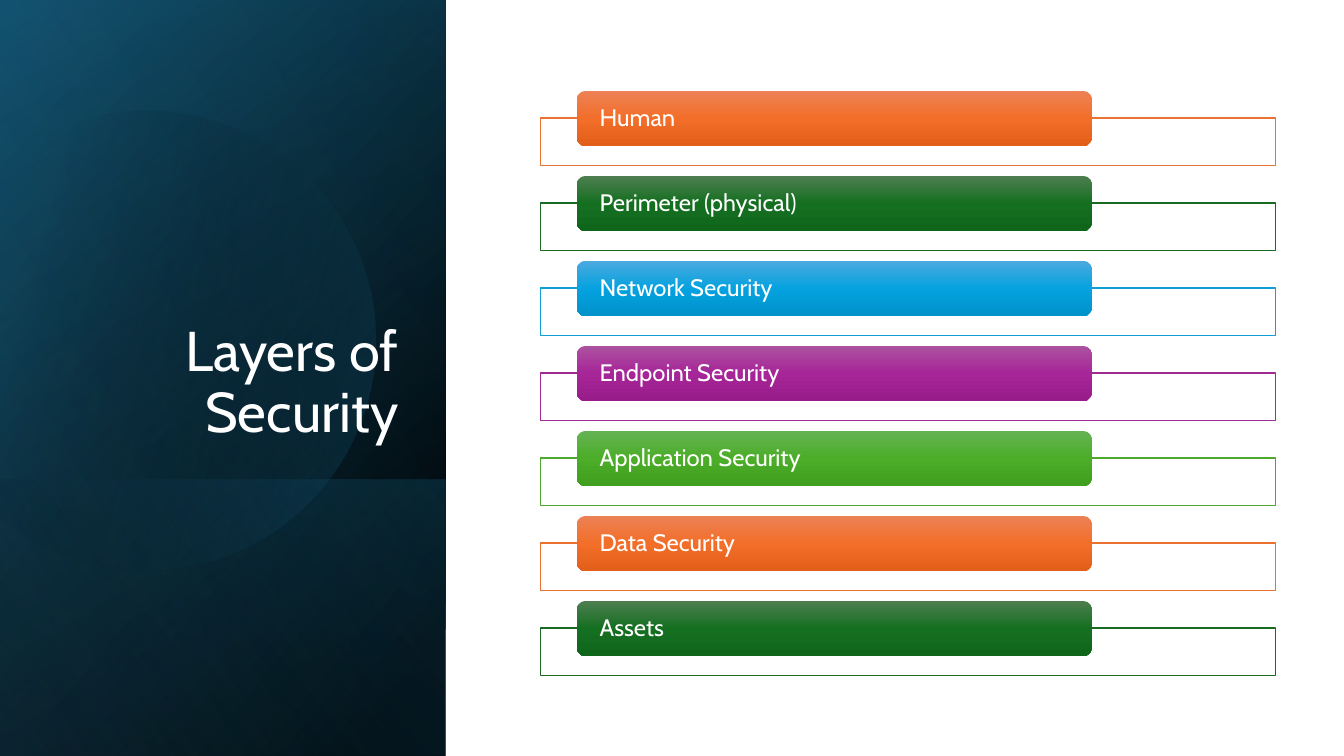
from math import cos, radians, sin, tan

from pptx import Presentation
from pptx.dml.color import RGBColor
from pptx.enum.shapes import MSO_SHAPE
from pptx.enum.text import MSO_ANCHOR, MSO_AUTO_SIZE, PP_ALIGN
from pptx.oxml.ns import qn
from pptx.util import Inches, Pt
from lxml.etree import SubElement

WIDTH, HEIGHT = 13.33, 7.5
PANEL_WIDTH = 4.42


def set_gradient(shape, stops, angle):
    """Stops are (position %, colour, opacity %)."""
    shape.shadow.inherit = False
    shape.line.fill.background()
    shape.fill.gradient()
    gradient = shape.element.spPr.find(qn("a:gradFill"))
    stop_list = gradient.find(qn("a:gsLst"))
    for old_stop in list(stop_list):
        stop_list.remove(old_stop)
    for position, color, opacity in stops:
        stop = SubElement(stop_list, qn("a:gs"), pos=str(position * 1000))
        fill = SubElement(stop, qn("a:srgbClr"), val=color)
        if opacity < 100:
            SubElement(fill, qn("a:alpha"), val=str(opacity * 1000))
    gradient.find(qn("a:lin")).set("ang", str(angle * 60000))


def format_text(shape, text, size, frame_format, paragraph_format):
    frame = shape.text_frame
    frame.text = text
    for name, value in frame_format.items():
        setattr(frame, name, value)
    paragraph = frame.paragraphs[0]
    for name, value in paragraph_format.items():
        setattr(paragraph, name, value)
    font = paragraph.runs[0].font
    font.name, font.size = "Cabin", Pt(size)
    font.color.rgb = RGBColor.from_string("FFFFFF")


presentation = Presentation()
presentation.slide_width, presentation.slide_height = Inches(WIDTH), Inches(HEIGHT)
slide = presentation.slides.add_slide(presentation.slide_layouts[5])
shapes = slide.shapes

# Left panel: gradient layers turned by 90 degrees
panels = [
    (HEIGHT, [(8, "000000", 100), (100, "104862", 100)], 50),
    (HEIGHT, [(0, "000000", 0), (99, "156082", 46)], 30),
    (2.74, [(2, "156082", 29), (100, "000000", 30)], 130),
    (HEIGHT, [(0, "000000", 0), (99, "46B1E1", 11)], 120),
]
for length, stops, angle in panels:
    left = (PANEL_WIDTH - length) / 2
    top = HEIGHT - (length + PANEL_WIDTH) / 2
    panel = shapes.add_shape(MSO_SHAPE.RECTANGLE, Inches(left), Inches(top),
                             Inches(length), Inches(PANEL_WIDTH))
    panel.rotation = 90
    panel.element.spPr.find(qn("a:xfrm")).set("flipH", "1")
    set_gradient(panel, stops, angle)

# Disc cut by a chord: start, then two handles and an end for each arc
center_x, center_y, radius = 1.44, 3.34, 2.28
arc_ends = [-118.1, -90, 0, 90, 150.3]
points = []
for start, end in zip(arc_ends, arc_ends[1:]):
    a, b = radians(start), radians(end)
    handle = 4 / 3 * tan((b - a) / 4)
    arc = [(cos(a), sin(a)),
           (cos(a) - handle * sin(a), sin(a) + handle * cos(a)),
           (cos(b) + handle * sin(b), sin(b) - handle * cos(b)),
           (cos(b), sin(b))]
    points += arc[1:] if points else arc
outline_points = [(center_x + radius * x, center_y + radius * y) for x, y in points]
builder = shapes.build_freeform(*outline_points[0], scale=Inches(1))
builder = shapes.build_freeform(*[value * 1000 for value in outline_points[0]],
                                scale=Inches(1) / 1000)
builder.add_line_segments([(x * 1000, y * 1000) for x, y in outline_points[1:]], close=True)
disc = builder.convert_to_shape()
segments = list(disc.element.iter(qn("a:lnTo")))
for first in range(0, len(segments), 3):
    curve = segments[first].makeelement(qn("a:cubicBezTo"))
    segments[first].addprevious(curve)
    for segment in segments[first:first + 3]:
        curve.append(segment[0])
        segment.getparent().remove(segment)
disc.rotation = 343.9
set_gradient(disc, [(29, "000000", 0), (100, "156082", 43)], 30)
panel.element.addprevious(disc.element)

# Title, brought in front of the panel
title = shapes.title
title.left, title.top, title.width, title.height = map(Inches, (0.64, 1.84, 3.41, 2.62))
format_text(title, "Layers of Security", 40,
            {"vertical_anchor": MSO_ANCHOR.BOTTOM, "word_wrap": True,
             "auto_size": MSO_AUTO_SIZE.NONE},
            {"alignment": PP_ALIGN.RIGHT, "line_spacing": 0.9})
disc.element.getparent().append(title.element)

# Security layers: an outlined frame with a labelled bar on its upper edge
palette = [
    ("E97132", "ED8257", "F26E29", "E25F1A"),
    ("196B24", "4D7E50", "156F21", "0F661B"),
    ("0F9ED5", "4CAADF", "05A2DF", "0092CB"),
    ("A02B93", "AC53A0", "A62598", "991C8B"),
    ("4EA72E", "66B354", "4BAD28", "409F1E"),
]
layers = ["Human", "Perimeter (physical)", "Network Security", "Endpoint Security",
          "Application Security", "Data Security", "Assets"]
FIRST_TOP, LAST_TOP = 0.9, 5.96
pitch = (LAST_TOP - FIRST_TOP) / (len(layers) - 1)
for row, layer in enumerate(layers):
    outline, *bar_colors = palette[row % len(palette)]
    top = FIRST_TOP + row * pitch

    frame = shapes.add_shape(MSO_SHAPE.RECTANGLE, Inches(5.36), Inches(top + 0.27),
                             Inches(7.29), Inches(0.47))
    frame.shadow.inherit = False
    frame.fill.solid()
    frame.fill.fore_color.rgb = RGBColor.from_string("FFFFFF")
    frame.line.color.rgb = RGBColor.from_string(outline)
    frame.line.width = Pt(1)

    bar = shapes.add_shape(MSO_SHAPE.ROUNDED_RECTANGLE, Inches(5.72), Inches(top),
                           Inches(5.11), Inches(0.55))
    set_gradient(bar, [(position, color, 100)
                       for position, color in zip((0, 50, 100), bar_colors)], 90)
    format_text(bar, layer, 17,
                {"vertical_anchor": MSO_ANCHOR.MIDDLE, "word_wrap": True,
                 "margin_left": Inches(0.2), "margin_right": Inches(0.2),
                 "margin_top": 0, "margin_bottom": 0},
                {"alignment": PP_ALIGN.LEFT, "line_spacing": 0.9})

presentation.save("out.pptx")
